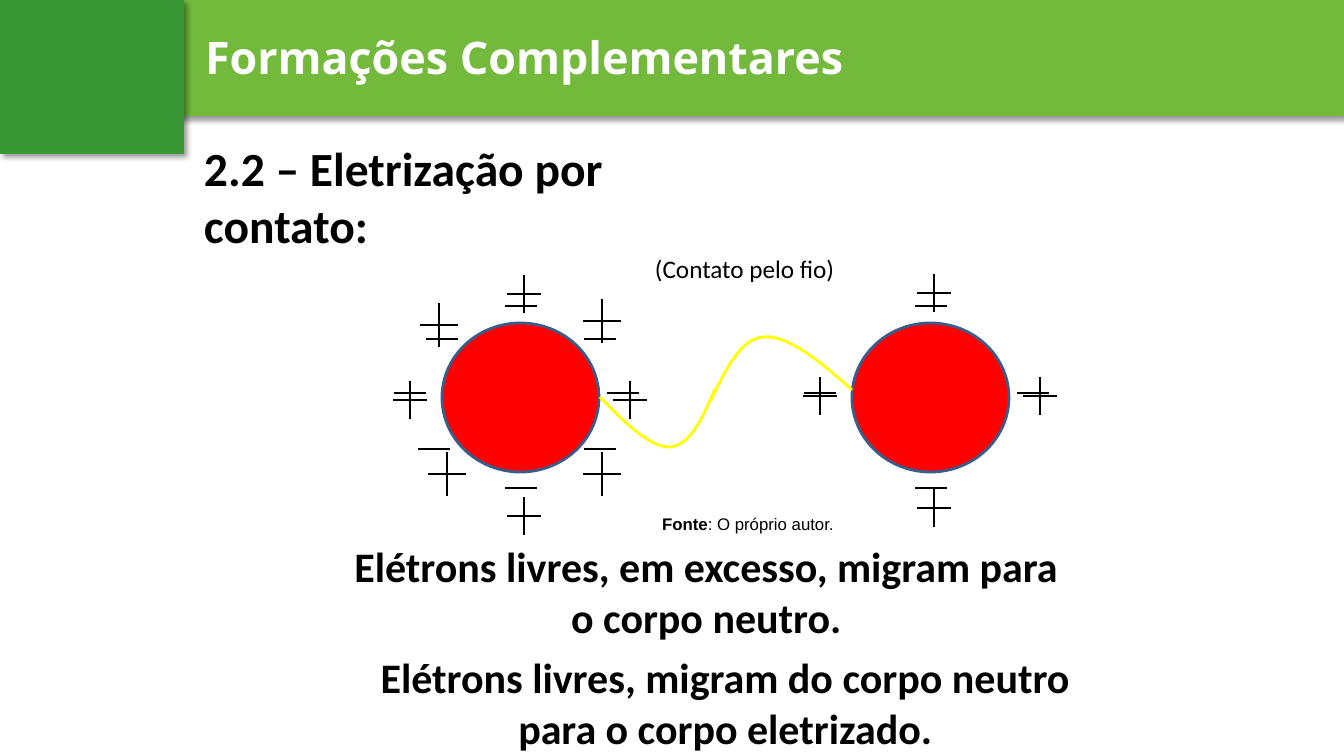
from lxml.etree import SubElement
from pptx import Presentation
from pptx.dml.color import RGBColor
from pptx.enum.shapes import MSO_CONNECTOR as Connector, MSO_SHAPE as Shape
from pptx.enum.text import MSO_AUTO_SIZE as AutoSize, PP_ALIGN as Align
from pptx.oxml.ns import qn
from pptx.util import Emu, Pt

SCALE = 914400 / 100.8


def px(value):
    return Emu(round(value * SCALE))


def color(value):
    return RGBColor.from_string(value)


def add_shadow(effects):
    shadow = SubElement(effects, qn("a:outerShdw"), blurRad=str(Pt(4)), dist=str(Pt(3)),
                        dir="2700000", algn="tl", rotWithShape="0")
    black = SubElement(shadow, qn("a:srgbClr"), val="000000")
    SubElement(black, qn("a:alpha"), val="40000")


class SlideBuilder:
    line_width = Pt(2)

    def __init__(self, slide):
        self.slide = slide

    def shape(self, kind, box, fill, line=None, shadow=False):
        shape = self.slide.shapes.add_shape(kind, *map(px, box))
        shape.fill.solid()
        shape.fill.fore_color.rgb = color(fill)
        if line:
            shape.line.color.rgb = color(line)
            shape.line.width = self.line_width
        else:
            shape.line.fill.background()
        shape.shadow.inherit = False
        if shadow:
            add_shadow(shape._element.spPr.find(qn("a:effectLst")))

    def text(self, box, runs, size, font="Calibri", fill="000000", align=Align.LEFT,
             inset=5, grow=True, shadow=False):
        frame = self.slide.shapes.add_textbox(*map(px, box)).text_frame
        frame_format = {
            "word_wrap": True,
            "auto_size": AutoSize.SHAPE_TO_FIT_TEXT if grow else AutoSize.NONE,
            "margin_left": px(10), "margin_right": px(10),
            "margin_top": px(inset), "margin_bottom": px(inset),
        }
        for name, value in frame_format.items():
            setattr(frame, name, value)
        paragraph = frame.paragraphs[0]
        paragraph.alignment = align
        for content, bold in runs:
            run = paragraph.add_run()
            run.text = content
            for name, value in {"name": font, "size": Pt(size), "bold": bold}.items():
                setattr(run.font, name, value)
            run.font.color.rgb = color(fill)
            if shadow:
                properties = run.font._element
                effects = SubElement(properties, qn("a:effectLst"))
                properties.find(qn("a:solidFill")).addnext(effects)
                add_shadow(effects)

    def line(self, *ends):
        connector = self.slide.shapes.add_connector(Connector.STRAIGHT, *map(px, ends))
        connector.line.color.rgb = color("000000")
        connector.line.width = self.line_width
        SubElement(connector._element.spPr, qn("a:effectLst"))

    def minus(self, left, y):
        self.line(left, y, left + 32, y)

    def plus(self, x, y, half_width, half_height):
        self.line(x - half_width, y, x + half_width, y)
        self.line(x, y - half_height, x, y + half_height)

    def curve(self, start, *points):
        builder = self.slide.shapes.build_freeform(*start, scale=SCALE)
        builder.add_line_segments(points, close=False)
        shape = builder.convert_to_shape()
        shape.fill.background()
        shape.line.color.rgb = color("FFFF00")
        shape.line.width = self.line_width
        shape.shadow.inherit = False
        path = shape._element.find(".//" + qn("a:path"))
        segments = path.findall(qn("a:lnTo"))
        for index in range(0, len(segments), 3):
            bezier = SubElement(path, qn("a:cubicBezTo"))
            for segment in segments[index:index + 3]:
                bezier.append(segment[0])
                path.remove(segment)


def main():
    presentation = Presentation()
    presentation.slide_width, presentation.slide_height = px(1344), px(756)
    page = SlideBuilder(presentation.slides.add_slide(presentation.slide_layouts[6]))

    page.shape(Shape.RECTANGLE, (142, 0, 1202, 116), "72B93C", shadow=True)
    page.text((195, 25, 1091, 65), [("Formações Complementares", True)], 32,
              font="Open Sans", fill="FFFFFF", grow=False, shadow=True)
    page.shape(Shape.RECTANGLE, (0, 0, 184, 154), "399736", shadow=True)

    for sphere_left in (442, 852):
        page.shape(Shape.OVAL, (sphere_left, 323, 157, 149), "FF0000", "385D8A")
        for offset, y in ((63, 306), (165, 393), (-48, 393), (63, 488)):
            page.minus(sphere_left + offset, y)

    for left, y in ((584, 339), (426, 339), (584, 449), (418, 449)):
        page.minus(left, y)
    for x, y in ((439, 325), (602, 321), (447, 474), (602, 474)):
        page.plus(x, y, 19, 22)
    for x, y in ((524, 294), (630, 400), (524, 516), (410, 400),
                 (934, 293), (1040, 396), (934, 508), (820, 396)):
        page.plus(x, y, 17, 19)

    page.curve((600, 397), (625, 423), (651, 448), (670, 447),
               (690, 446), (703, 417), (715, 389))
    page.curve((852, 390), (821, 362), (788, 335), (764, 337),
               (741, 338), (726, 369), (711, 400))

    page.text((194, 134, 580, 126), [("2.2 – Eletrização por contato:", True)], 34)
    page.text((645, 248, 207, 41), [("(Contato pelo fio)", False)], 18)
    page.text((340, 536, 733, 113),
              [("Elétrons livres, em excesso, migram para o corpo neutro.", True)],
              30, align=Align.CENTER)
    page.text((338, 647, 775, 109),
              [("Elétrons livres, migram do corpo neutro para o corpo eletrizado.", True)],
              30, align=Align.CENTER)
    page.text((589, 504, 318, 40), [("Fonte", True), (": O próprio autor.", False)], 12,
              font="Arial", align=Align.CENTER, inset=10)

    presentation.save("out.pptx")


if __name__ == "__main__":
    main()
